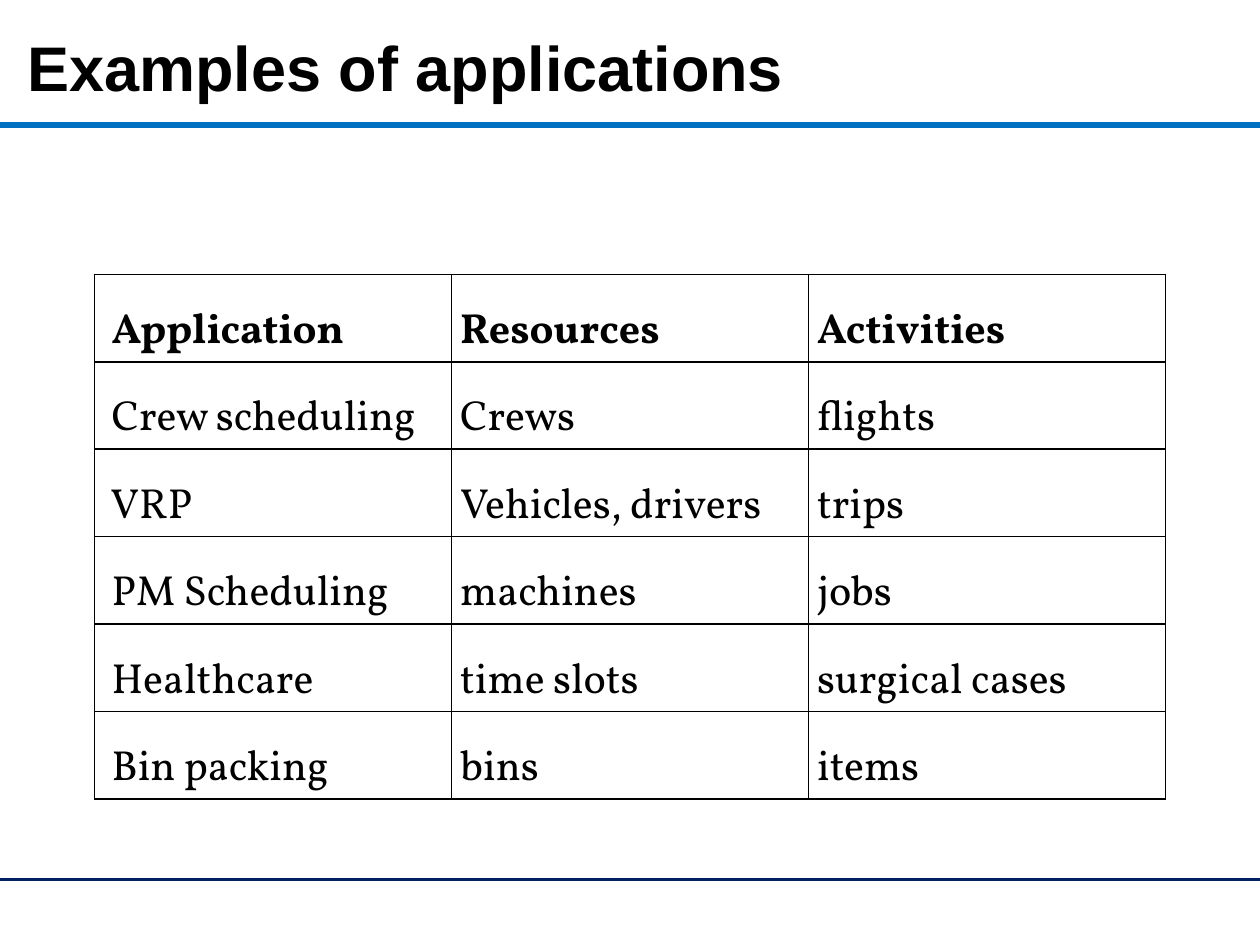
from lxml import etree
from pptx import Presentation
from pptx.dml.color import RGBColor
from pptx.enum.shapes import MSO_CONNECTOR
from pptx.enum.text import MSO_ANCHOR
from pptx.oxml import parse_xml
from pptx.oxml.ns import nsdecls, qn
from pptx.util import Pt

STRAIGHT = MSO_CONNECTOR.STRAIGHT
MIDDLE = MSO_ANCHOR.MIDDLE

BLACK = RGBColor(0x00, 0x00, 0x00)
BLUE = RGBColor(0x00, 0x70, 0xC0)
NAVY = RGBColor(0x00, 0x20, 0x60)

PAGE_WIDTH, PAGE_HEIGHT = 720, 540
COLUMN_WIDTH, ROW_HEIGHT = 204, 50
BORDER_WIDTH = 1

APPLICATIONS = [
    (" Application", "Resources", "Activities"),
    (" Crew scheduling", "Crews", "flights"),
    (" VRP", "Vehicles, drivers", "trips"),
    (" PM Scheduling", "machines", "jobs"),
    (" Healthcare", "time slots", "surgical cases"),
    (" Bin packing", "bins", "items"),
]


def add_text_run(para, text, font_name, size, bold):
    span = para.add_run()
    span.text = text
    span.font.name = font_name
    span.font.size = Pt(size)
    span.font.bold = bold
    span.font.color.rgb = BLACK


def add_rule(page, top, color, width):
    """Draw a horizontal line across the whole page."""
    rule = page.shapes.add_connector(STRAIGHT, 0, Pt(top), Pt(PAGE_WIDTH), Pt(top))
    rule.line.color.rgb = color
    rule.line.width = Pt(width)
    etree.SubElement(rule._element.spPr, qn("a:effectLst"))


def add_title(page, text):
    box = page.shapes.add_textbox(Pt(8.64), Pt(9.36), Pt(702.72), Pt(56.88))
    frame = box.text_frame
    frame.word_wrap = True
    frame.vertical_anchor = MIDDLE
    add_text_run(frame.paragraphs[0], text, "Arial", 36, True)


def set_borders(cell):
    properties = cell._tc.get_or_add_tcPr()
    for index, side in enumerate(("lnL", "lnR", "lnT", "lnB")):
        border = parse_xml(
            f'<a:{side} {nsdecls("a")} w="{Pt(BORDER_WIDTH)}"><a:solidFill>'
            f'<a:srgbClr val="{BLACK}"/></a:solidFill></a:{side}>'
        )
        properties.insert(index, border)


def fill_cell(cell, text, bold):
    cell.fill.background()
    set_borders(cell)
    cell.vertical_anchor = MIDDLE
    cell.margin_left = cell.margin_right = Pt(5)
    cell.margin_top = cell.margin_bottom = 0
    para = cell.text_frame.paragraphs[0]
    para.line_spacing = 1.5
    add_text_run(para, text, "Vollkorn", 24, bold)


def add_grid(page, rows, left, top):
    row_count, column_count = len(rows), len(rows[0])
    table = page.shapes.add_table(
        row_count, column_count, Pt(left), Pt(top),
        Pt(COLUMN_WIDTH * column_count), Pt(ROW_HEIGHT * row_count),
    ).table
    table.horz_banding = False
    for row_index, row in enumerate(rows):
        for column_index, text in enumerate(row):
            fill_cell(table.cell(row_index, column_index), text, row_index == 0)


def main():
    deck = Presentation()
    deck.slide_width, deck.slide_height = Pt(PAGE_WIDTH), Pt(PAGE_HEIGHT)
    page = deck.slides.add_slide(deck.slide_layouts[6])
    add_rule(page, 71.5, BLUE, 3)
    add_rule(page, 502.5, NAVY, 1.5)
    add_title(page, "Examples of applications")
    add_grid(page, APPLICATIONS, 54, 156.75)
    deck.save("out.pptx")


if __name__ == "__main__":
    main()
